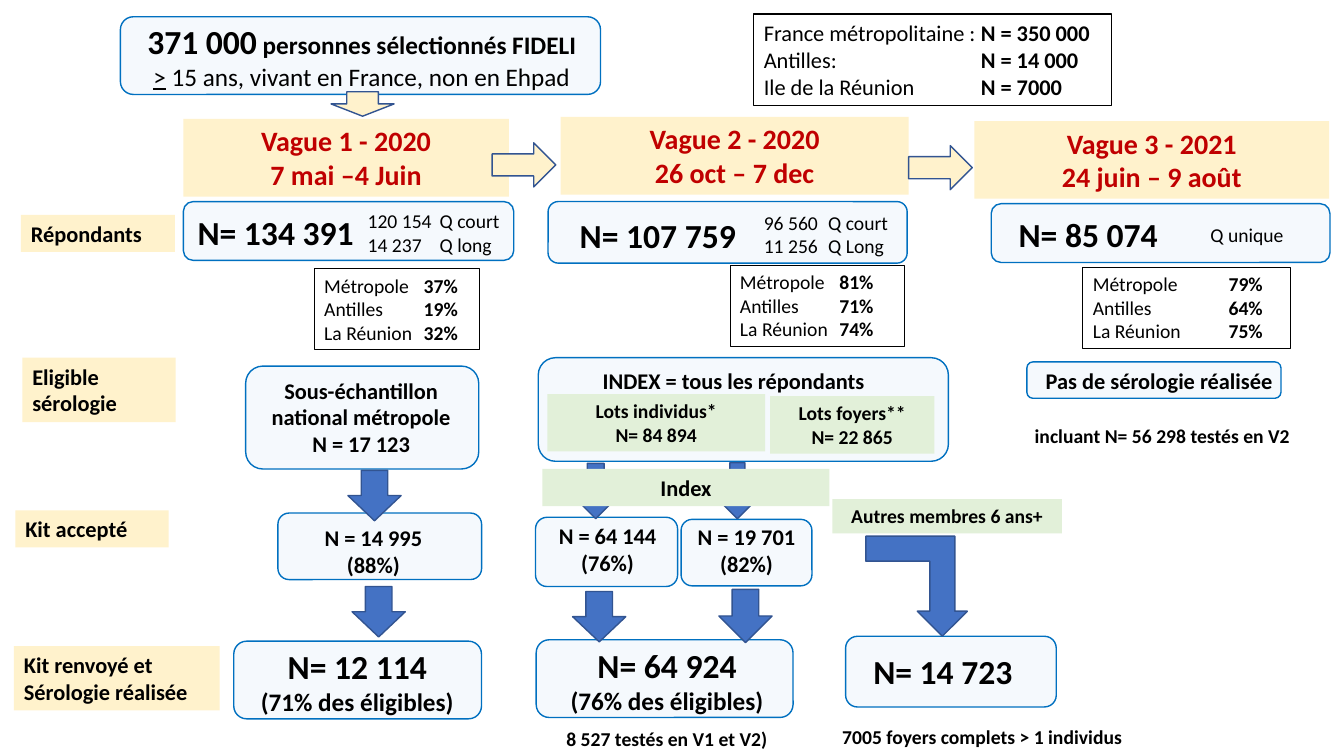
from dataclasses import dataclass
from typing import NamedTuple, Optional

from lxml.etree import SubElement
from pptx import Presentation
from pptx.dml.color import RGBColor
from pptx.enum.shapes import MSO_SHAPE
from pptx.enum.text import PP_ALIGN
from pptx.oxml.ns import qn
from pptx.util import Pt


@dataclass(frozen=True)
class Theme:
    font: str = "Calibri"
    black: str = "000000"
    red: str = "C00000"
    card: str = "F5F9FD"
    card_line: str = "0070C0"
    cream: str = "FFF2CC"
    green: str = "E2F0D9"
    blue: str = "4472C4"
    arrow_line: str = "325491"
    total: float = 24
    title: float = 20
    lead: float = 18
    body: float = 16
    small: float = 14


THEME = Theme()


class Box(NamedTuple):
    left: float
    top: float
    width: float
    height: float

    def inner(self, left, top, width, height):
        """Return a box given relative to this one."""
        return Box(self.left + left, self.top + top, width, height)

    def lengths(self):
        return [Pt(length) for length in self]


class Span(NamedTuple):
    text: str
    size: Optional[float] = None
    bold: Optional[bool] = None
    underline: bool = False


@dataclass(frozen=True)
class Wave:
    """One survey wave; its inner boxes are relative to box."""
    box: Box
    title: str
    dates: str
    band: tuple
    total: str
    total_at: tuple
    detail: list
    detail_box: tuple
    detail_tab: float
    rates: tuple
    rates_box: tuple
    rates_tab: float


WAVES = [
    Wave(Box(131, 85, 232.5, 55.5), "Vague 1 - 2020", "7 mai –4 Juin",
         (0, 59, 236, 42), "N= 134 391", (3, 62.5),
         ["120 154\tQ court", "14 237\tQ long"], (124.5, 61, 115, 41), 51.5,
         ("37%", "19%", "32%"), (93.5, 107, 118, 58), 71),
    Wave(Box(400.5, 83.5, 248.5, 55.5), "Vague 2 - 2020", "26 oct – 7 dec",
         (-9, 60.5, 256.5, 44), "N= 107 759", (6.5, 66.5),
         ["96 560\tQ court", "11 256\tQ Long"], (138, 63.5, 135, 41), 46,
         ("81%", "71%", "74%"), (121, 106, 124.5, 58), 71),
    Wave(Box(696, 86.5, 253.5, 55.5), "Vague 3 - 2021", "24 juin – 9 août",
         (12, 59, 242, 42), "N= 85 074", (24.5, 62.5),
         ["Q unique"], (161.5, 69, 86, 24.5), 46,
         ("79%", "64%", "75%"), (77.5, 104.5, 148.5, 58), 97),
]


def colour(code):
    return RGBColor.from_string(code)


def add_figure(slide, kind, box, fill, line):
    shape = slide.shapes.add_shape(kind, *box.lengths())
    shape.shadow.inherit = False
    shape.fill.solid()
    shape.fill.fore_color.rgb = colour(fill)
    shape.line.color.rgb = colour(line)
    shape.line.width = Pt(1)
    return shape


def add_card(slide, box):
    return add_figure(slide, MSO_SHAPE.ROUNDED_RECTANGLE, box, THEME.card, THEME.card_line)


def add_arrow(slide, box, fill=THEME.blue, kind=MSO_SHAPE.DOWN_ARROW):
    return add_figure(slide, kind, box, fill, THEME.arrow_line)


def add_text(slide, box, lines, size=THEME.body, bold=True, ink=THEME.black,
             centred=True, fill=None, framed=False, tab=None):
    """Add lines of text; a line is a string or a list of spans."""
    shape = slide.shapes.add_textbox(*box.lengths())
    if fill:
        shape.fill.solid()
        shape.fill.fore_color.rgb = colour(fill)
    if framed:
        shape.line.color.rgb = colour(THEME.black)
        shape.line.width = Pt(0.75)
    frame = shape.text_frame
    frame.word_wrap = True
    for index, line in enumerate(lines):
        paragraph = frame.add_paragraph() if index else frame.paragraphs[0]
        paragraph.alignment = PP_ALIGN.CENTER if centred else PP_ALIGN.LEFT
        if tab:
            tabs = SubElement(paragraph._p.get_or_add_pPr(), qn("a:tabLst"))
            SubElement(tabs, qn("a:tab"), pos=str(int(Pt(tab))), algn="l")
        for span in [Span(line)] if isinstance(line, str) else line:
            run = paragraph.add_run()
            run.text = span.text
            run.font.name = THEME.font
            run.font.size = Pt(span.size or size)
            run.font.bold = bold if span.bold is None else span.bold
            run.font.underline = span.underline
            run.font.color.rgb = colour(ink)


def add_tabbed_list(slide, box, rows, size, tab):
    lines = [[Span(f"{name}\t"), Span(value, bold=True)] for name, value in rows]
    add_text(slide, box, lines, size, bold=False, centred=False, framed=True, tab=tab)


def add_result(slide, card, text, total, share):
    add_card(slide, card)
    add_text(slide, text, [[Span(total, THEME.total)], share], THEME.lead)


def draw_sample(slide, box):
    add_card(slide, box)
    add_text(slide, box.inner(9, -0.5, 327, 58), [
        [Span("371 000", THEME.total), Span(" personnes sélectionnés FIDELI")],
        [Span(">", bold=False, underline=True),
         Span(" 15 ans, vivant en France, non en Ehpad", bold=False)],
    ], THEME.lead)
    add_arrow(slide, box.inner(150.5, 53.5, 45, 17.5), THEME.cream)


def draw_wave(slide, wave):
    box = wave.box
    add_card(slide, box.inner(*wave.band))
    add_text(slide, box.inner(*wave.total_at, 140, 36), [wave.total], THEME.total, centred=False)
    add_text(slide, box.inner(*wave.detail_box), wave.detail, THEME.small,
             bold=False, centred=False, tab=wave.detail_tab)
    rows = zip(("Métropole", "Antilles", "La Réunion"), wave.rates)
    add_tabbed_list(slide, box.inner(*wave.rates_box), rows, THEME.small, wave.rates_tab)
    add_text(slide, box, [wave.title, wave.dates], THEME.title, ink=THEME.red, fill=THEME.cream)


def draw_subsample_path(slide, box):
    add_card(slide, box.inner(8.5, 0, 166.5, 73.5))
    add_text(slide, box.inner(16, 4, 150, 65.5),
             ["Sous-échantillon national métropole", "N = 17 123"])
    add_card(slide, box.inner(31.5, 105, 145.5, 47.5))
    add_text(slide, box.inner(39, 109.5, 121.5, 46), ["N = 14 995", "(88%)"])
    add_result(slide, box.inner(0, 196.5, 177, 55.5), box.inner(6.5, 196.5, 163.5, 58),
               "N= 12 114", "(71% des éligibles)")
    for left, top in ((81.5, 74.5), (84.5, 157.5)):
        add_arrow(slide, box.inner(left, top, 38, 36))


def draw_index_path(slide, box):
    add_result(slide, box.inner(0.5, 201.5, 183.5, 55.5), box.inner(4, 201.5, 180, 58),
               "N= 64 924", "(76% des éligibles)")
    kits = [((0, 114, 101.5, 49.5), (4, 114, 95, 46), (31, 75.5, 24, 39.5),
             (26.5, 167, 38, 36), ["N = 64 144", "(76%)"]),
            ((104, 115.5, 93.5, 47.5), (104, 114.5, 93.5, 46), (133.5, 75, 21.5, 40),
             (131, 165.5, 38, 38), ["N = 19 701", "(82%)"])]
    for card, text, arrow_in, arrow_out, lines in kits:
        add_card(slide, box.inner(*card))
        add_text(slide, box.inner(*text), lines)
        add_arrow(slide, box.inner(*arrow_in))
        add_arrow(slide, box.inner(*arrow_out))
    add_card(slide, box.inner(2, 0, 293, 74))
    add_text(slide, box.inner(20.5, 3.5, 242, 26.5), ["INDEX = tous les répondants"])
    lots = [((8.5, 26, 155.5, 41), ["Lots individus*", "N= 84 894"]),
            ((167.5, 27.5, 117.5, 41), ["Lots foyers**", "N= 22 865"])]
    for lot, lines in lots:
        add_text(slide, box.inner(*lot), lines, THEME.small, fill=THEME.green)
    add_text(slide, box.inner(5, 79.5, 205, 26.5), ["Index"], fill=THEME.green)
    add_text(slide, box.inner(15, 260.5, 164, 24.5), ["8 527 testés en V1 et V2)"],
             THEME.small, centred=False)


def draw_household_path(slide, box):
    add_text(slide, box.inner(0, 0, 164, 24.5), ["Autres membres 6 ans+"],
             THEME.small, fill=THEME.green)
    add_card(slide, box.inner(9.5, 98, 150.5, 50.5))
    add_text(slide, box.inner(19.5, 105, 119, 36), ["N= 14 723"], THEME.total)
    bent = add_arrow(slide, box.inner(24, 26.5, 72.5, 71.5), kind=MSO_SHAPE.BENT_UP_ARROW)
    bent.element.spPr.find(qn("a:xfrm")).set("flipV", "1")
    add_text(slide, box.inner(0, 157.5, 219.5, 24.5), ["7005 foyers complets > 1 individus"],
             THEME.small, centred=False)


def draw_no_serology(slide, box):
    add_card(slide, box.inner(8, 0, 181.5, 26))
    add_text(slide, box.inner(0, 0.5, 205, 26.5), ["Pas de sérologie réalisée"])
    add_text(slide, box.inner(6.5, 41, 205, 24.5), ["incluant N= 56 298 testés en V2"],
             THEME.small, centred=False)


def draw_step_labels(slide, box):
    steps = [("Répondants", (5, 0, 110, 26.5)),
             ("Eligible sérologie", (6, 102, 109.5, 46)),
             ("Kit accepté", (1, 211, 109.5, 26.5)),
             ("Kit renvoyé et Sérologie réalisée", (0, 308, 147, 46))]
    for label, place in steps:
        add_text(slide, box.inner(*place), [label], centred=False, fill=THEME.cream)


def main():
    presentation = Presentation()
    presentation.slide_width, presentation.slide_height = Pt(960), Pt(540)
    slide = presentation.slides.add_slide(presentation.slide_layouts[6])
    draw_sample(slide, Box(86, 12, 343, 55.5))
    territories = [("France métropolitaine :", "N = 350 000"),
                   ("Antilles:", "N = 14 000"), ("Ile de la Réunion", "N = 7000")]
    add_tabbed_list(slide, Box(538.5, 10, 255.5, 65.5), territories, THEME.body, 155)
    for wave in WAVES:
        draw_wave(slide, wave)
    for left, top in ((358.5, 95), (656, 97)):
        add_arrow(slide, Box(left, top, 31.5, 45.5), THEME.cream).rotation = 270
    draw_step_labels(slide, Box(10, 153.5, 147, 354))
    draw_subsample_path(slide, Box(167, 261.5, 177, 252))
    draw_index_path(slide, Box(382.5, 255.5, 295, 285))
    draw_household_path(slide, Box(594.5, 356.5, 219.5, 182))
    draw_no_serology(slide, Box(725.5, 258.5, 211.5, 65.5))
    presentation.save("out.pptx")


if __name__ == "__main__":
    main()
